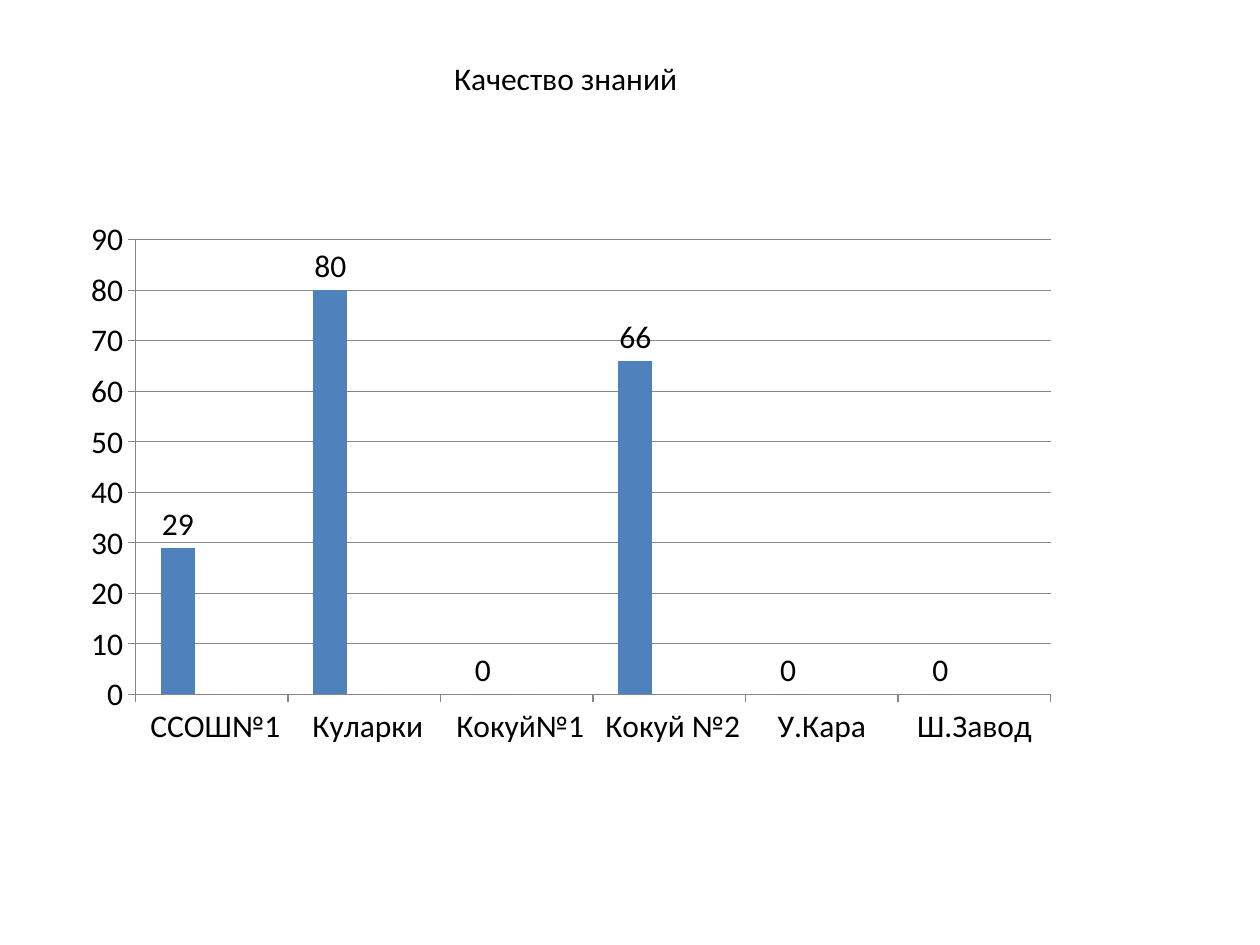
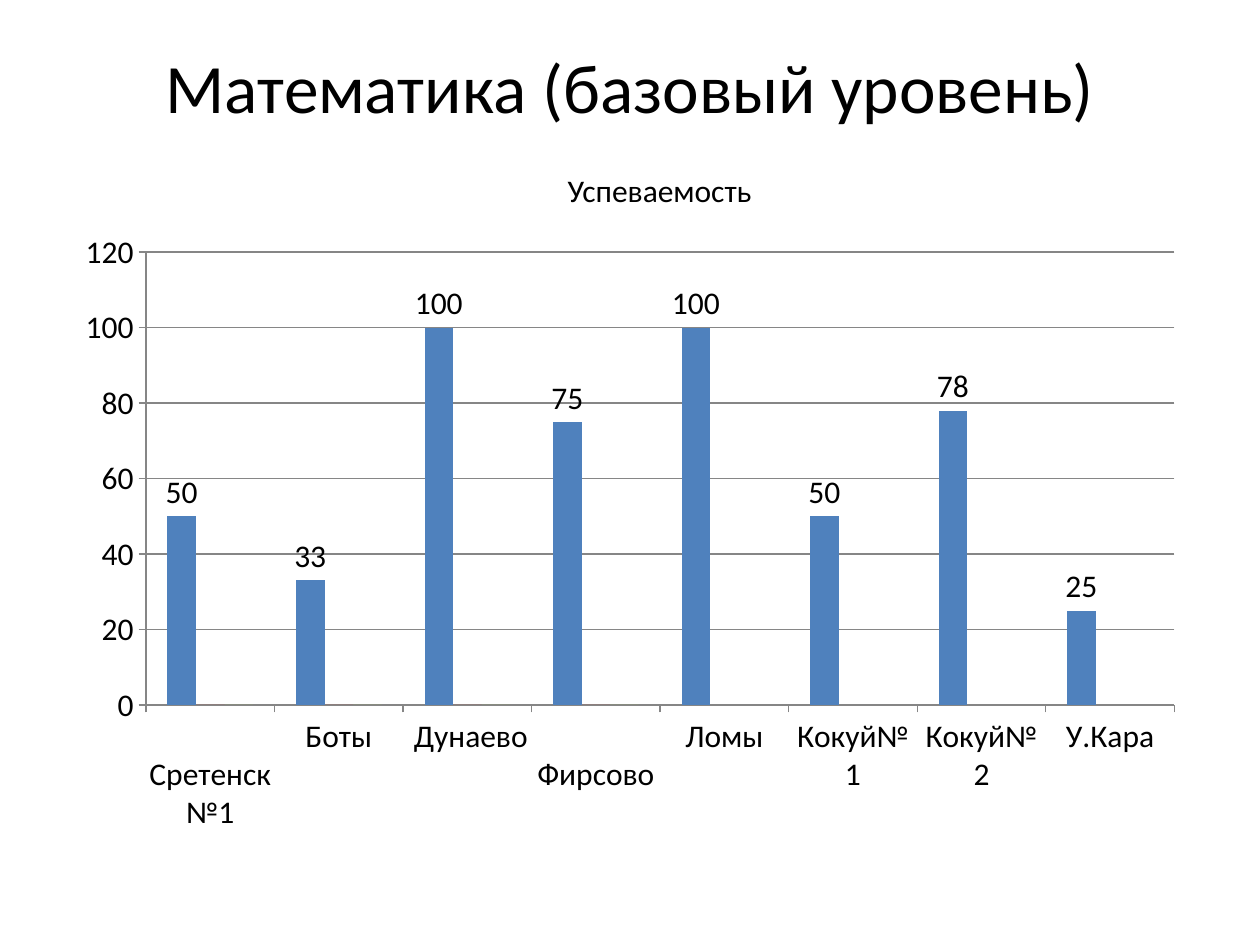
from lxml import etree
from pptx import Presentation
from pptx.chart.data import CategoryChartData
from pptx.dml.color import RGBColor
from pptx.enum.chart import XL_CHART_TYPE, XL_LABEL_POSITION, XL_TICK_MARK
from pptx.enum.text import MSO_ANCHOR, PP_ALIGN
from pptx.oxml.ns import qn
from pptx.util import Inches, Pt

COLUMNS = XL_CHART_TYPE.COLUMN_CLUSTERED
OUTSIDE_END = XL_LABEL_POSITION.OUTSIDE_END
TICK_OUT = XL_TICK_MARK.OUTSIDE
MIDDLE = MSO_ANCHOR.MIDDLE
CENTER = PP_ALIGN.CENTER

FONT = "Calibri"
BODY_SIZE = 18
TITLE_SIZE = 39.6
COLORS = {
    "background": "FFFFFF",
    "text": "000000",
    "axis": "868686",
    "Series 1": "4F81BD",
    "Series 2": "C0504D",
    "Series 3": "9BBB59",
}


class SchoolDeck:
    """Builds slides of school results in one shared style."""

    def __init__(self):
        self.deck = Presentation()
        self.deck.slide_width = Inches(10)
        self.deck.slide_height = Inches(7.5)
        self.page = None

    def color(self, name):
        return RGBColor.from_string(COLORS[name])

    def style_font(self, font, size):
        font.name = FONT
        font.size = Pt(size)
        font.color.rgb = self.color("text")

    def add_page(self):
        self.page = self.deck.slides.add_slide(self.deck.slide_layouts[6])
        fill = self.page.background.fill
        fill.solid()
        fill.fore_color.rgb = self.color("background")

    def add_text(self, text, left, top, width, height, size=BODY_SIZE):
        box = self.page.shapes.add_textbox(
            Inches(left), Inches(top), Inches(width), Inches(height))
        frame = box.text_frame
        frame.word_wrap = True
        frame.vertical_anchor = MIDDLE
        frame.text = text
        paragraph = frame.paragraphs[0]
        paragraph.alignment = CENTER
        self.style_font(paragraph.runs[0].font, size)

    def add_title(self, text):
        self.add_text(text, 0.5, 0.3, 9, 0.77, TITLE_SIZE)

    def add_column_chart(self, results, plot_area=None):
        data = CategoryChartData()
        data.categories = list(results)
        empty = [0] * 4 + [None] * (len(results) - 4)
        data.add_series("Series 1", list(results.values()))
        data.add_series("Series 2", empty)
        data.add_series("Series 3", empty)
        chart = self.page.shapes.add_chart(
            COLUMNS, Inches(0.5), Inches(1.75), Inches(9), Inches(4.95), data).chart
        chart.has_title = False
        chart.has_legend = False
        self.style_font(chart.font, BODY_SIZE)

        plot = chart.plots[0]
        plot.gap_width = 150
        plot.overlap = 0
        plot.vary_by_categories = False
        for series in plot.series:
            series.format.fill.solid()
            series.format.fill.fore_color.rgb = self.color(series.name)
        labels = plot.series[0].data_labels
        labels.show_value = True
        labels.position = OUTSIDE_END
        self.style_font(labels.font, BODY_SIZE)

        chart.value_axis.has_major_gridlines = True
        self.style_line(chart.value_axis.major_gridlines.format.line)
        for axis in (chart.category_axis, chart.value_axis):
            axis.major_tick_mark = TICK_OUT
            self.style_line(axis.format.line)
        if plot_area:
            self.place_plot(chart, plot_area)

    def style_line(self, line):
        line.color.rgb = self.color("axis")
        line.width = Pt(0.75)

    def place_plot(self, chart, plot_area):
        area = chart.element.find(".//" + qn("c:plotArea"))
        for old in area.findall(qn("c:layout")):
            area.remove(old)
        layout = etree.Element(qn("c:layout"))
        area.insert(0, layout)
        manual = etree.SubElement(layout, qn("c:manualLayout"))
        settings = {"layoutTarget": "inner", "xMode": "edge", "yMode": "edge"}
        settings.update(zip("xywh", plot_area))
        for tag, value in settings.items():
            etree.SubElement(manual, qn("c:" + tag)).set("val", str(value))


def main():
    """Build both result slides and save them."""
    deck = SchoolDeck()

    deck.add_page()
    deck.add_column_chart(
        {" ССОШ№1": 29, " Куларки": 80, " Кокуй№1": 0,
         " Кокуй №2": 66, "У.Кара": 0, "Ш.Завод": 0},
        plot_area=(0.064, 0.031, 0.807, 0.729))
    deck.add_text("Качество знаний", 2.09, 0.42, 4.8, 0.4)

    deck.add_page()
    deck.add_title("Математика (базовый уровень)")
    deck.add_column_chart(
        {" Сретенск№1": 50, "Боты": 33, " Дунаево": 100, " Фирсово": 75,
         "Ломы": 100, "Кокуй№1": 50, "Кокуй№2": 78, "У.Кара": 25})
    deck.add_text("Успеваемость", 3.11, 1.31, 4.25, 0.4)

    deck.deck.save("out.pptx")


if __name__ == "__main__":
    main()
